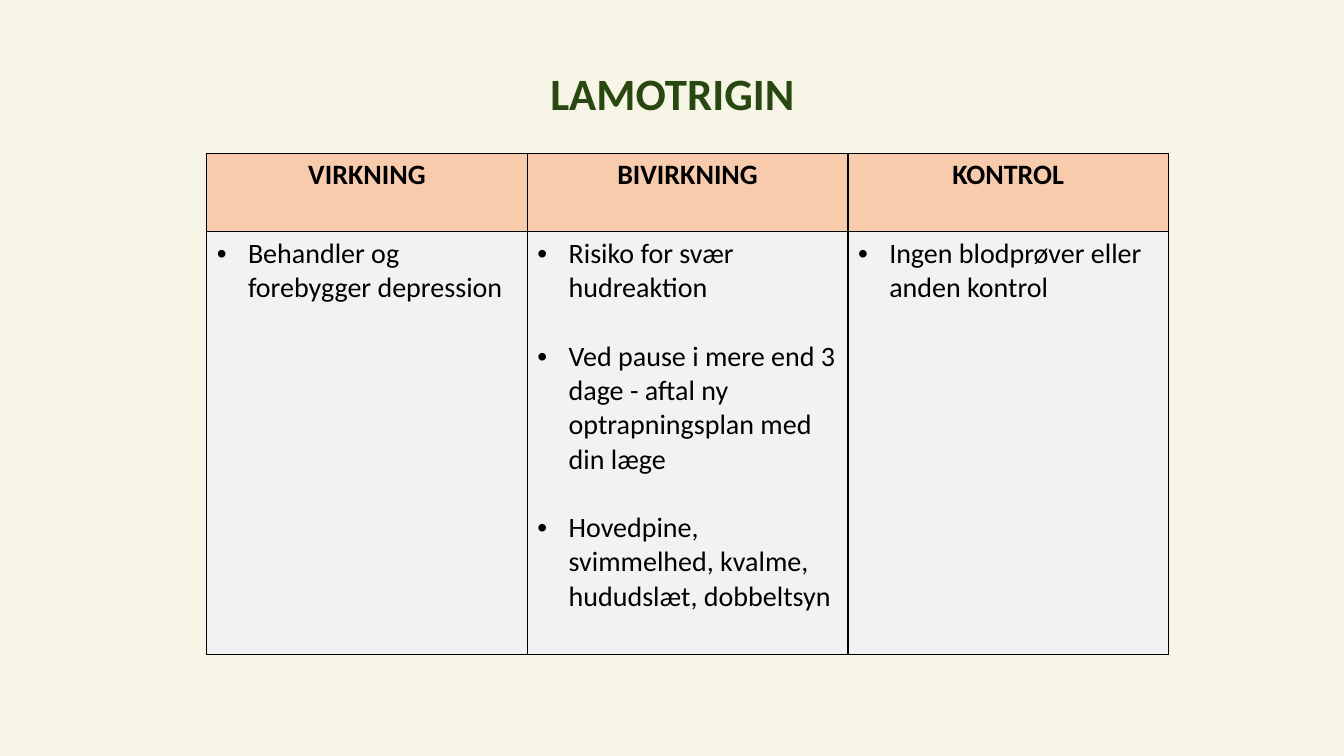
from dataclasses import dataclass

from lxml import etree
from pptx import Presentation
from pptx.dml.color import RGBColor
from pptx.enum.text import MSO_ANCHOR, PP_ALIGN
from pptx.oxml.ns import qn
from pptx.util import Inches, Pt

CENTER, LEFT = PP_ALIGN.CENTER, PP_ALIGN.LEFT
MIDDLE = MSO_ANCHOR.MIDDLE
FONT = "Calibri"
BLACK, GREEN = "000000", "294711"
CREAM, PEACH, GRAY = "F7F6E6", "F8CBAD", "F2F2F2"
WIDTH, HEAD, BODY = 3.18, 0.78, 4.19
HANG = Inches(0.31)


@dataclass
class Column:
    head: str
    items: list[str]


COLUMNS = [
    Column("VIRKNING", ["Behandler og forebygger depression"]),
    Column("BIVIRKNING", [
        "Risiko for svær hudreaktion",
        "Ved pause i mere end 3 dage - aftal ny optrapningsplan med din læge",
        "Hovedpine, svimmelhed, kvalme, hududslæt, dobbeltsyn",
    ]),
    Column("KONTROL", ["Ingen blodprøver eller anden kontrol"]),
]


def paint(fill, color: str) -> None:
    fill.solid()
    fill.fore_color.rgb = RGBColor.from_string(color)


def add_run(para, text: str, size: int, color: str, bold: bool) -> None:
    run = para.add_run()
    run.text = text
    font = run.font
    font.name, font.size, font.bold = FONT, Pt(size), bold
    font.color.rgb = RGBColor.from_string(color)


def add_bullet(para) -> None:
    props = para._p.get_or_add_pPr()
    props.set("marL", str(HANG))
    props.set("indent", str(-HANG))
    etree.SubElement(props, qn("a:buFont")).set("typeface", "Arial")
    etree.SubElement(props, qn("a:buChar")).set("char", "•")


def style_cell(cell, color: str) -> None:
    # Borders come before the fill in the cell properties
    props = cell._tc.get_or_add_tcPr()
    for side in ("L", "R", "T", "B"):
        line = etree.SubElement(props, qn(f"a:ln{side}"), w=str(Pt(1)))
        solid = etree.SubElement(line, qn("a:solidFill"))
        etree.SubElement(solid, qn("a:srgbClr"), val=BLACK)
    paint(cell.fill, color)


def add_title(slide, text: str) -> None:
    box = slide.shapes.add_textbox(
        Inches(0.92), Inches(0.53), Inches(11.5), Inches(0.84))
    frame = box.text_frame
    frame.word_wrap = True
    frame.vertical_anchor = MIDDLE
    para = frame.paragraphs[0]
    para.alignment, para.line_spacing = CENTER, 0.9
    add_run(para, text, 32, GREEN, True)


def add_grid(slide, columns: list[Column]) -> None:
    count = len(columns)
    table = slide.shapes.add_table(
        2, count, Inches(2.05), Inches(1.52),
        Inches(WIDTH * count), Inches(HEAD + BODY)).table
    table.first_row = table.horz_banding = False
    for row, height in zip(table.rows, (HEAD, BODY)):
        row.height = Inches(height)

    for i, column in enumerate(columns):
        table.columns[i].width = Inches(WIDTH)
        # Heading
        cell = table.cell(0, i)
        style_cell(cell, PEACH)
        para = cell.text_frame.paragraphs[0]
        para.alignment = CENTER
        add_run(para, column.head, 20, BLACK, True)
        # Bullet list, one line apart
        cell = table.cell(1, i)
        style_cell(cell, GRAY)
        frame = cell.text_frame
        for j, item in enumerate(column.items):
            para = frame.add_paragraph() if j else frame.paragraphs[0]
            add_bullet(para)
            para.alignment = LEFT
            if j:
                para.space_before = Pt(24.4)
            add_run(para, item, 20, BLACK, False)


def main() -> None:
    deck = Presentation()
    deck.slide_width, deck.slide_height = Inches(13.33), Inches(7.5)
    slide = deck.slides.add_slide(deck.slide_layouts[6])
    paint(slide.background.fill, CREAM)
    add_title(slide, "LAMOTRIGIN")
    add_grid(slide, COLUMNS)
    deck.save("out.pptx")


if __name__ == "__main__":
    main()
